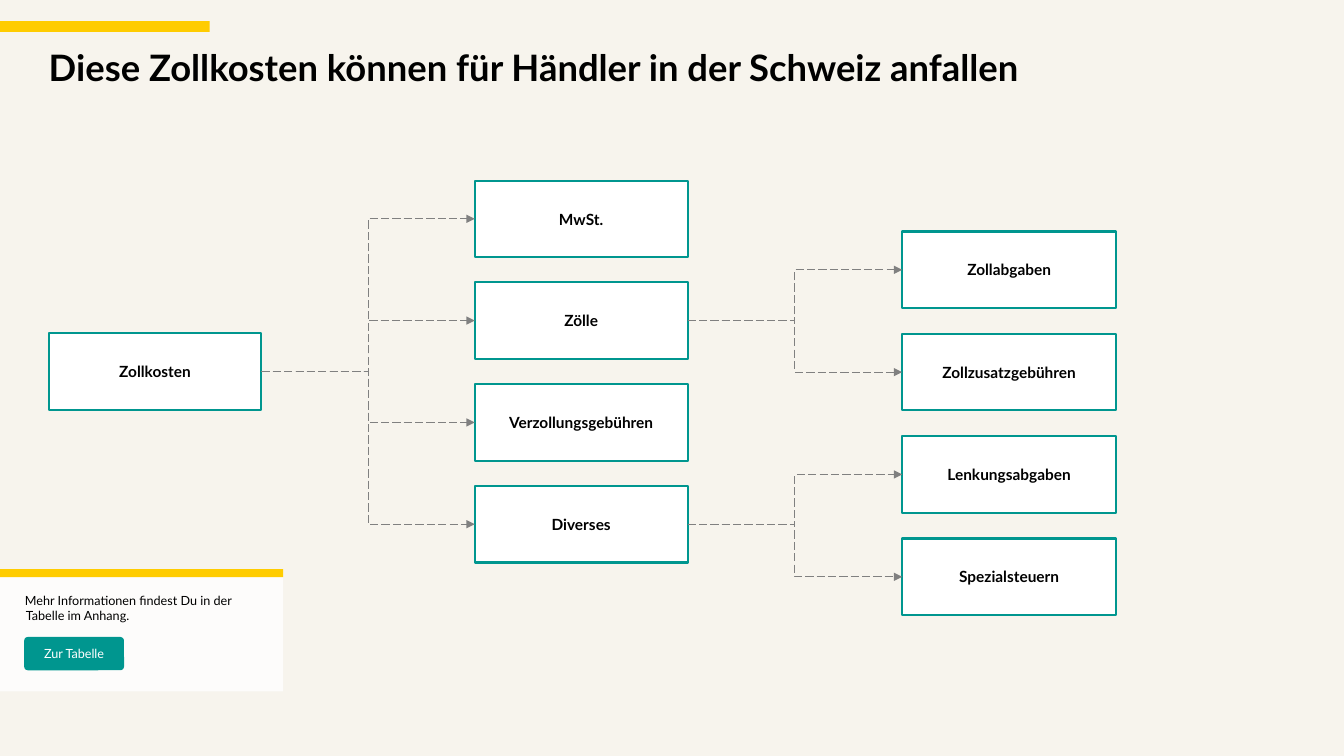
from pptx import Presentation
from pptx.dml.color import RGBColor
from pptx.enum.dml import MSO_LINE
from pptx.enum.shapes import MSO_CONNECTOR, MSO_SHAPE
from pptx.enum.text import MSO_ANCHOR, PP_ALIGN
from pptx.oxml.ns import qn
from pptx.util import Pt
from lxml import etree

RECT, ROUND = MSO_SHAPE.RECTANGLE, MSO_SHAPE.ROUNDED_RECTANGLE
ELBOW, DASH = MSO_CONNECTOR.ELBOW, MSO_LINE.LONG_DASH
TOP, MIDDLE = MSO_ANCHOR.TOP, MSO_ANCHOR.MIDDLE
LEFT, CENTER = PP_ALIGN.LEFT, PP_ALIGN.CENTER
RIGHT_SITE, LEFT_SITE = 3, 1

COLORS = {
    "paper": "F7F4ED", "yellow": "FFCC00", "teal": "00968F",
    "white": "FFFFFF", "black": "000000", "gray": "808080",
}


def color(name):
    return RGBColor.from_string(COLORS[name])


def block(text, x, y, w, h, kind=RECT, fill=None, line=None, size=11,
          bold=False, ink="black", align=CENTER, anchor=MIDDLE, pad=7.2):
    """Add a shape, with text if there is any."""
    shape = slide.shapes.add_shape(kind, Pt(x), Pt(y), Pt(w), Pt(h))
    shape.shadow.inherit = False
    if fill:
        shape.fill.solid()
        shape.fill.fore_color.rgb = color(fill)
    else:
        shape.fill.background()
    if line:
        shape.line.color.rgb = color(line)
        shape.line.width = Pt(1.5)
    else:
        shape.line.fill.background()
    if text:
        frame = shape.text_frame
        frame.word_wrap = True
        frame.vertical_anchor = anchor
        frame.margin_left = frame.margin_right = Pt(pad)
        frame.margin_top = frame.margin_bottom = Pt(min(pad, 5.76))
        par = frame.paragraphs[0]
        par.alignment = align
        run = par.add_run()
        run.text = text
        run.font.name = "Lato"
        run.font.size = Pt(size)
        run.font.bold = bold
        run.font.color.rgb = color(ink)
    return shape


deck = Presentation()
deck.slide_width, deck.slide_height = Pt(960), Pt(540)
slide = deck.slides.add_slide(deck.slide_layouts[6])
slide.background.fill.solid()
slide.background.fill.fore_color.rgb = color("paper")

# Title with accent bar
block("", 0, 15.2, 149.8, 7.6, fill="yellow")
title = slide.shapes.add_textbox(Pt(34.8), Pt(34.6), Pt(893), Pt(58))
frame = title.text_frame
frame.word_wrap = True
frame.margin_left = frame.margin_right = 0
frame.margin_top = frame.margin_bottom = 0
head = frame.paragraphs[0]
head.line_spacing = Pt(29)
run = head.add_run()
run.text = "Diese Zollkosten können für Händler in der Schweiz anfallen"
run.font.name, run.font.size, run.font.bold = "Lato", Pt(26), True
run.font.color.rgb = color("black")

# Note card with button
card = block("", 0, 411.8, 202.3, 82, fill="white")
shade = card.fill._xPr.find(qn("a:solidFill"))[0]
etree.SubElement(shade, qn("a:alpha")).set("val", "80000")
block("", 0, 406.5, 202.3, 5.8, fill="yellow")
note = block("Mehr Informationen findest Du in der Tabelle im Anhang.",
             17.8, 423.4, 163.4, 36.7, size=9, align=LEFT, anchor=TOP, pad=0)
indent = note.text_frame.paragraphs[0]._p.get_or_add_pPr()
indent.set("marL", str(Pt(0.7)))
indent.set("indent", str(-Pt(0.7)))
button = block("Zur Tabelle", 17.3, 455, 71.3, 23.8, kind=ROUND,
               fill="teal", size=9, ink="white", pad=5.76)
button.adjustments[0] = 0.11

# Tree boxes: left, width, first top, row step, labels
COLUMNS = [
    (34.8, 152, 238.2, 0, ["Zollkosten"]),
    (339.2, 152, 129, 72.7,
     ["MwSt.", "Zölle", "Verzollungsgebühren", "Diverses"]),
    (644.4, 153, 165.4, 73.1,
     ["Zollabgaben", "Zollzusatzgebühren", "Lenkungsabgaben",
      "Spezialsteuern"]),
]
boxes = {}
for x, w, y, step, labels in COLUMNS:
    for row, label in enumerate(labels):
        boxes[label] = block(label, x, y + row * step, w, 54.7,
                             fill="white", line="teal", bold=True)

# Dashed arrows from parent to child
TREE = {
    "Zollkosten": COLUMNS[1][4],
    "Zölle": COLUMNS[2][4][:2],
    "Diverses": COLUMNS[2][4][2:],
}
for parent, children in TREE.items():
    for child in children:
        link = slide.shapes.add_connector(ELBOW, 0, 0, 0, 0)
        link.begin_connect(boxes[parent], RIGHT_SITE)
        link.end_connect(boxes[child], LEFT_SITE)
        link.line.color.rgb = color("gray")
        link.line.width = Pt(0.75)
        link.line.dash_style = DASH
        tip = etree.SubElement(link.line._get_or_add_ln(), qn("a:tailEnd"))
        tip.set("type", "triangle")
        etree.SubElement(link._element.spPr, qn("a:effectLst"))

deck.save("out.pptx")
